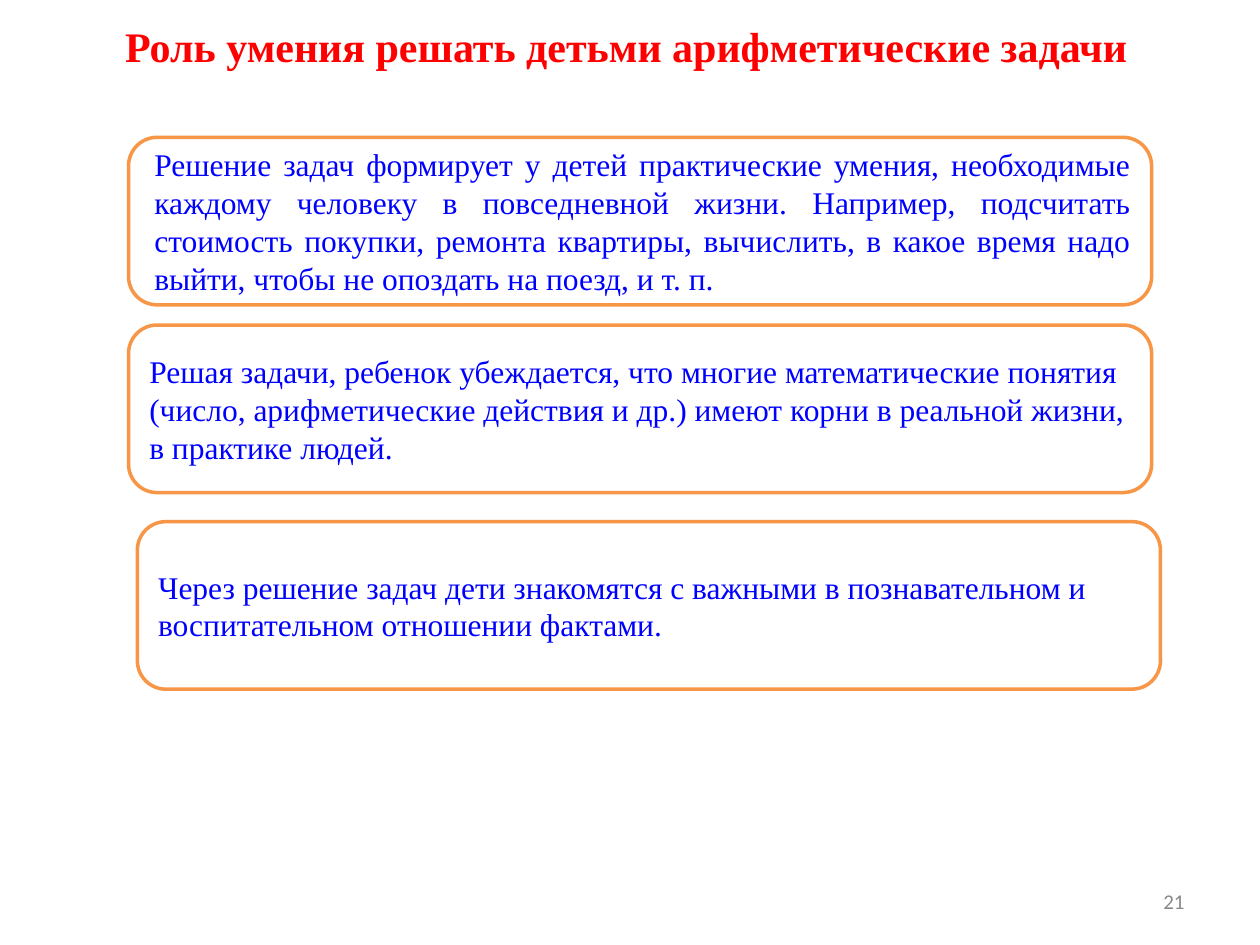
from pptx import Presentation
from pptx.dml.color import RGBColor
from pptx.enum.shapes import MSO_SHAPE
from pptx.enum.text import MSO_ANCHOR, MSO_AUTO_SIZE, PP_ALIGN
from pptx.util import Pt

ROUNDED = MSO_SHAPE.ROUNDED_RECTANGLE
MIDDLE = MSO_ANCHOR.MIDDLE
NO_FIT = MSO_AUTO_SIZE.NONE
LEFT, CENTER, RIGHT, JUSTIFY = (
    PP_ALIGN.LEFT, PP_ALIGN.CENTER, PP_ALIGN.RIGHT, PP_ALIGN.JUSTIFY)

RED = RGBColor(0xFF, 0x00, 0x00)
BLUE = RGBColor(0x00, 0x00, 0xFF)
ORANGE = RGBColor(0xF7, 0x96, 0x46)
WHITE = RGBColor(0xFF, 0xFF, 0xFF)
GRAY = RGBColor(0x89, 0x89, 0x89)

TITLE_FONT = {"name": "Times New Roman", "size": Pt(24), "bold": True}
CARD_FONT = {"name": "Times New Roman", "size": Pt(18), "bold": False}
NUMBER_FONT = {"name": "Calibri", "size": Pt(12), "bold": False}

CARD_WIDTH, CARD_HEIGHT = 584.64, 95.76

# Left, top, alignment, left indent and wording of each card
CARDS = [
    (73.44, 78.48, JUSTIFY, 2.88,
     "Решение задач формирует у детей практические умения, необходимые "
     "каждому человеку в повседневной жизни. Например, подсчитать стоимость "
     "покупки, ремонта квартиры, вычислить, в какое время надо выйти, чтобы "
     "не опоздать на поезд, и т. п."),
    (73.44, 185.76, LEFT, 0,
     "Решая задачи, ребенок убеждается, что многие математические понятия "
     "(число, арифметические действия и др.) имеют корни в реальной жизни, "
     "в практике людей."),
    (78.48, 298.08, LEFT, 0,
     "Через решение задач дети знакомятся с важными в познавательном и "
     "воспитательном отношении фактами."),
]


class SlideBuilder:
    """Holds the current slide and its shared text style."""

    def __init__(self, page):
        self.page = page

    def set_text(self, shape, text, font, color, align, indent=0):
        frame = shape.text_frame
        for name, value in {"word_wrap": True, "auto_size": NO_FIT,
                            "vertical_anchor": MIDDLE}.items():
            setattr(frame, name, value)
        para = frame.paragraphs[0]
        para.alignment = align
        if indent:
            para._p.get_or_add_pPr().set("marL", str(Pt(indent)))
        span = para.add_run()
        span.text = text
        for name, value in font.items():
            setattr(span.font, name, value)
        span.font.color.rgb = color

    def title(self, left, top, width, height, text):
        shape = self.page.shapes.title
        for name, value in {"left": left, "top": top,
                            "width": width, "height": height}.items():
            setattr(shape, name, Pt(value))
        self.set_text(shape, text, TITLE_FONT, RED, CENTER)

    def card(self, left, top, align, indent, text):
        shape = self.page.shapes.add_shape(
            ROUNDED, Pt(left), Pt(top), Pt(CARD_WIDTH), Pt(CARD_HEIGHT))
        shape.adjustments[0] = 0.17
        shape.shadow.inherit = False
        shape.fill.solid()
        shape.fill.fore_color.rgb = WHITE
        shape.line.color.rgb = ORANGE
        shape.line.width = Pt(2)
        self.set_text(shape, text, CARD_FONT, BLUE, align, indent)

    def page_number(self, left, top, width, height, text):
        box = self.page.shapes.add_textbox(
            Pt(left), Pt(top), Pt(width), Pt(height))
        self.set_text(box, text, NUMBER_FONT, GRAY, RIGHT)


def main():
    deck = Presentation()
    deck.slide_width, deck.slide_height = Pt(720), Pt(540)
    title_only = deck.slide_layouts[5]
    builder = SlideBuilder(deck.slides.add_slide(title_only))

    # Heading
    builder.title(33.84, 0, 648, 51.84,
                  "Роль умения решать детьми арифметические задачи")

    # Cards
    for card in CARDS:
        builder.card(*card)

    # Footer
    builder.page_number(516.24, 500.4, 167.76, 28.8, "21")

    deck.save("out.pptx")


if __name__ == "__main__":
    main()
